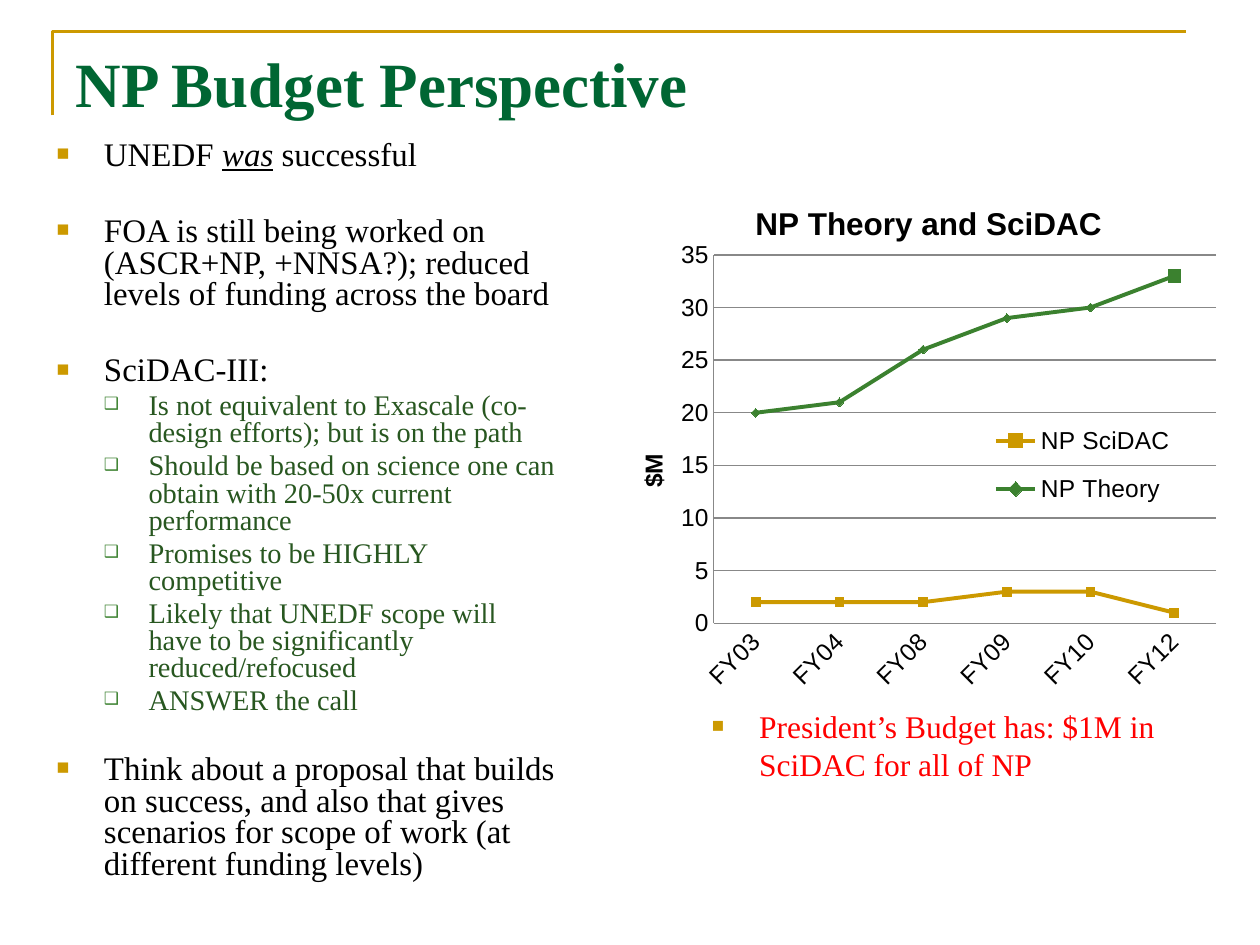
from lxml import etree
from pptx import Presentation
from pptx.chart import data as chart_data
from pptx.dml import color
from pptx.enum import chart as chart_enum
from pptx.enum import text
from pptx.oxml import ns
from pptx.util import Pt

SERIF = "Times New Roman"
GOLD = "CC9900"
GREEN = "3B812F"
BLACK = "000000"
LEVELS = [
    dict(size=18.8, color=BLACK, bullet="■", bullet_color=GOLD, percent=65, left=27, hang=27),
    dict(size=16.2, color="285720", bullet="❑", bullet_color=GREEN, percent=60, left=52.5, hang=25.5),
]
POINTS = [
    (0, 0, ["UNEDF ", "was", " successful"]),
    (0, 25.5, ["FOA is still being worked on (ASCR+NP, +NNSA?); reduced levels of funding across the board"]),
    (0, 25.5, ["SciDAC-III:"]),
    (1, 3.2, ["Is not equivalent to Exascale (co-design efforts); but is on the path"]),
    (1, 3.2, ["Should be based on science one can obtain with 20-50x current performance"]),
    (1, 3.2, ["Promises to be HIGHLY competitive"]),
    (1, 3.2, ["Likely that UNEDF scope will have to be significantly reduced/refocused"]),
    (1, 3.2, ["ANSWER the call"]),
    (0, 22.5, ["Think about a proposal that builds on success, and also that gives scenarios for scope of work (at different funding levels)"]),
]


def rgb(value):
    return color.RGBColor.from_string(value)


def set_font(font, name, size, value, bold=False):
    font.name, font.size, font.bold = name, Pt(size), bold
    font.color.rgb = rgb(value)


def place(shape, left, top, width, height):
    shape.left, shape.top, shape.width, shape.height = Pt(left), Pt(top), Pt(width), Pt(height)
    frame = shape.text_frame
    frame.word_wrap = True
    frame.auto_size = text.MSO_AUTO_SIZE.NONE
    frame.vertical_anchor = text.MSO_ANCHOR.TOP
    return frame


def add_bullet(paragraph, style):
    properties = paragraph._p.get_or_add_pPr()
    properties.set("marL", str(Pt(style["left"])))
    properties.set("indent", str(-Pt(style["hang"])))
    bullet_color = etree.SubElement(properties, ns.qn("a:buClr"))
    etree.SubElement(bullet_color, ns.qn("a:srgbClr"), val=style["bullet_color"])
    etree.SubElement(properties, ns.qn("a:buSzPct"), val=str(style["percent"] * 1000))
    etree.SubElement(properties, ns.qn("a:buChar"), char=style["bullet"])


def format_item(paragraph, style, before, spacing):
    paragraph.space_before = Pt(before)
    paragraph.line_spacing = spacing
    add_bullet(paragraph, style)
    set_font(paragraph.font, SERIF, style["size"], style["color"])


def add_title(slide):
    frame = place(slide.shapes.title, 36, 21.6, 648, 90)
    paragraph = frame.paragraphs[0]
    paragraph.text = "NP Budget Perspective"
    paragraph.alignment = text.PP_ALIGN.LEFT
    set_font(paragraph.font, SERIF, 36, "006633", True)


def add_points(slide):
    frame = place(slide.placeholders[1], 25.2, 77, 300.2, 442)
    for index, (level, before, runs) in enumerate(POINTS):
        paragraph = frame.add_paragraph() if index else frame.paragraphs[0]
        paragraph.level = level
        for content in runs:
            run = paragraph.add_run()
            run.text = content
            if content == "was":
                run.font.italic = run.font.underline = True
        format_item(paragraph, LEVELS[level], before, 0.8)


def add_note(slide):
    frame = place(slide.placeholders[2], 399.6, 400.3, 286.6, 51)
    paragraph = frame.paragraphs[0]
    paragraph.text = "President’s Budget has: $1M in SciDAC for all of NP"
    format_item(paragraph, {**LEVELS[0], "size": 18, "color": "FF0000"}, 0, 1.0)


def add_frame_line(slide):
    builder = slide.shapes.build_freeform(Pt(30), Pt(66))
    builder.add_line_segments([(Pt(30), Pt(18)), (Pt(678), Pt(18))], close=False)
    shape = builder.convert_to_shape()
    shape.shadow.inherit = False
    shape.fill.background()
    shape.line.color.rgb = rgb(GOLD)
    shape.line.width = Pt(1.5)


def set_layout(element, x, y, width=None, height=None, inner=False):
    layout = element.find(ns.qn("c:layout"))
    if layout is None:
        layout = etree.Element(ns.qn("c:layout"))
        before = element.find(ns.qn("c:overlay"))
        if before is not None:
            before.addprevious(layout)
        else:
            element.insert(0, layout)
    for child in list(layout):
        layout.remove(child)
    manual = etree.SubElement(layout, ns.qn("c:manualLayout"))
    values = [("xMode", "edge"), ("yMode", "edge"), ("x", x), ("y", y), ("w", width), ("h", height)]
    if inner:
        values.insert(0, ("layoutTarget", "inner"))
    for tag, value in values:
        if value is not None:
            etree.SubElement(manual, ns.qn("c:" + tag), val=str(value))


def set_chart_title(owner, content, size, x, y):
    owner.has_title = True
    title = owner.chart_title if hasattr(owner, "chart_title") else owner.axis_title
    paragraph = title.text_frame.paragraphs[0]
    run = paragraph.add_run()
    run.text = content
    set_font(run.font, "Arial", size, BLACK, True)
    set_layout(title._element, x, y)


def format_marker(marker, style, size, value):
    marker.style, marker.size = style, size
    marker.format.fill.solid()
    marker.format.fill.fore_color.rgb = rgb(value)
    marker.format.line.color.rgb = rgb(value)


def format_axis(axis):
    axis.major_tick_mark = axis.minor_tick_mark = chart_enum.XL_TICK_MARK.NONE
    axis.format.line.color.rgb = rgb("888888")
    set_font(axis.tick_labels.font, "Arial", 14, BLACK)


def add_budget_chart(slide):
    budget = chart_data.CategoryChartData()
    budget.categories = ["FY03", "FY04", "FY08", "FY09", "FY10", "FY12"]
    budget.add_series("NP SciDAC", [2, 2, 2, 3, 3, 1])
    budget.add_series("NP Theory", [20, 21, 26, 29, 30, 33])
    chart = slide.shapes.add_chart(
        chart_enum.XL_CHART_TYPE.LINE_MARKERS, Pt(342.7), Pt(94.3), Pt(476), Pt(306), budget
    ).chart
    set_font(chart.font, "Arial", 10, BLACK)
    set_chart_title(chart, "NP Theory and SciDAC", 18, 0.18, 0.06)
    plot = chart.plots[0]
    plot.vary_by_categories = False

    square, diamond = chart_enum.XL_MARKER_STYLE.SQUARE, chart_enum.XL_MARKER_STYLE.DIAMOND
    for series, value, style in zip(plot.series, [GOLD, GREEN], [square, diamond]):
        series.smooth = False
        series.format.line.color.rgb = rgb(value)
        series.format.line.width = Pt(2.25)
        format_marker(series.marker, style, 5, value)
    latest = plot.series[1].points[5]
    latest.format.line.color.rgb = rgb(GREEN)
    latest.format.line.width = Pt(2.25)
    format_marker(latest.marker, square, 7, "FFCC44")

    format_axis(chart.category_axis)
    label_body = chart.category_axis._element.find(ns.qn("c:txPr")).find(ns.qn("a:bodyPr"))
    label_body.set("rot", "-2700000")
    label_body.set("vert", "horz")
    axis = chart.value_axis
    format_axis(axis)
    axis.minimum_scale, axis.maximum_scale, axis.major_unit = 0, 35, 5
    axis.major_gridlines.format.line.color.rgb = rgb("888888")
    set_chart_title(axis, "$M", 14, 0.04, 0.53)
    title_body = axis.axis_title.text_frame._txBody.find(ns.qn("a:bodyPr"))
    title_body.set("rot", "-5400000")
    title_body.set("vert", "horz")

    chart.has_legend = True
    chart.legend.position = chart_enum.XL_LEGEND_POSITION.RIGHT
    chart.legend.include_in_layout = False
    set_font(chart.legend.font, "Arial", 14, BLACK)
    set_layout(chart.legend._element, 0.44, 0.45, 0.28, 0.22)
    set_layout(chart._chartSpace.chart.plotArea, 0.137, 0.168, 0.603, 0.688, True)


def main():
    presentation = Presentation()
    presentation.slide_width, presentation.slide_height = Pt(720), Pt(540)
    slide = presentation.slides.add_slide(presentation.slide_layouts[3])
    add_frame_line(slide)
    add_title(slide)
    add_budget_chart(slide)
    add_points(slide)
    add_note(slide)
    presentation.save("out.pptx")


if __name__ == "__main__":
    main()
